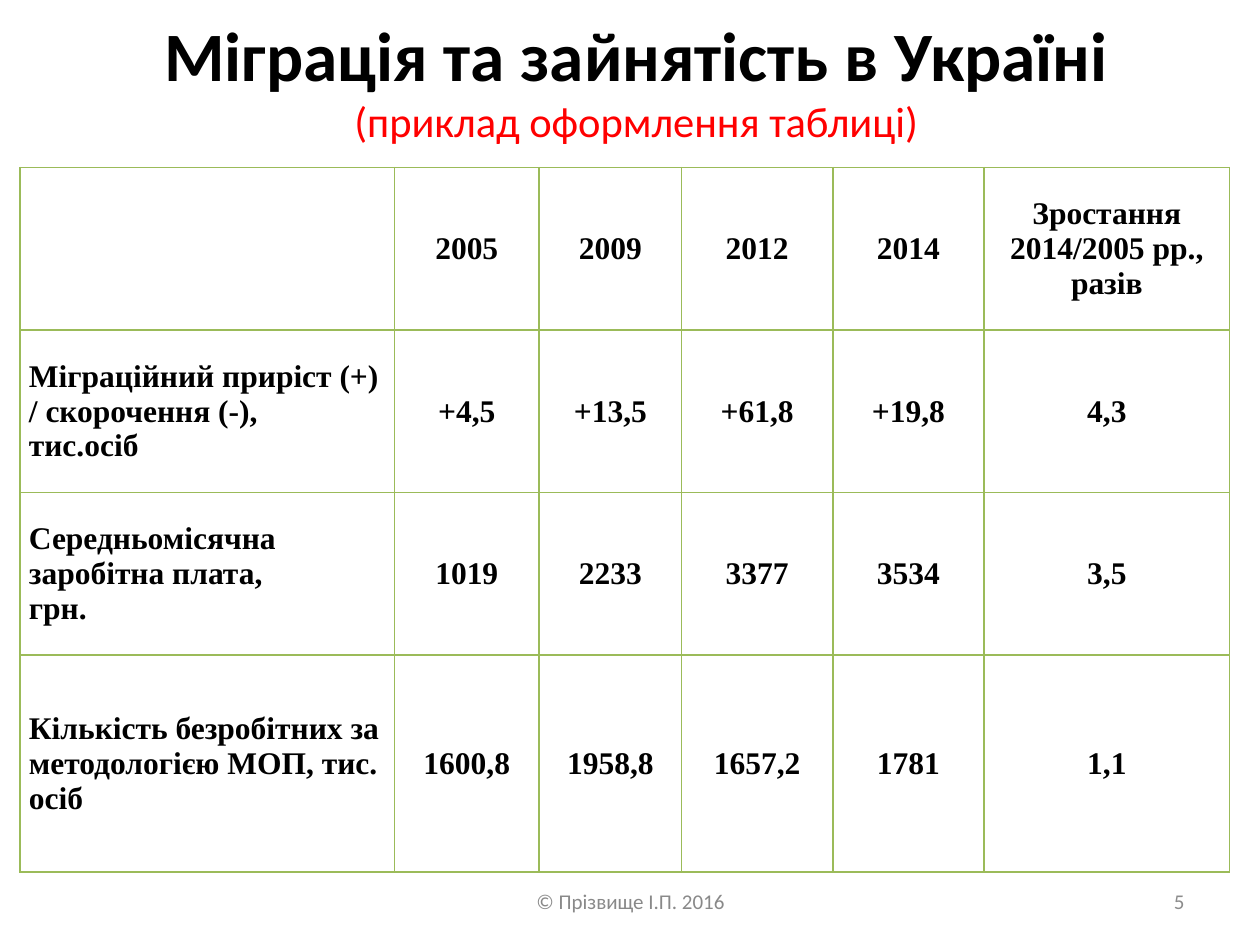
from lxml.etree import SubElement
from pptx import Presentation
from pptx.dml.color import RGBColor
from pptx.enum.text import MSO_ANCHOR as Anchor, PP_ALIGN as Align
from pptx.oxml.ns import qn
from pptx.util import Inches, Pt

BLACK, RED, GREEN = "000000", "FF0000", "9BBB59"
TITLE = dict(name="Calibri", size=Pt(39.6), bold=True)
SUBTITLE = dict(name="Calibri", size=Pt(24.3), bold=False)
FOOTER = dict(name="Calibri", size=Pt(12))
CELL = dict(name="Times New Roman", size=Pt(18), bold=True)
CELL_BOX = dict(margin_left=Inches(0.07), margin_right=Inches(0.07),
                margin_top=0, margin_bottom=0, vertical_anchor=Anchor.MIDDLE)

COLUMNS = [2.97, 1.15, 1.13, 1.2, 1.2, 1.95]
ROWS = [1.29, 1.29, 1.29, 1.72]
DATA = [
    ["", "2005", "2009", "2012", "2014", "Зростання\n2014/2005 рр.,\nразів"],
    ["Міграційний приріст (+) / скорочення (-),\nтис.осіб",
     "+4,5", "+13,5", "+61,8", "+19,8", "4,3"],
    ["Середньомісячна заробітна плата,\nгрн.",
     "1019", "2233", "3377", "3534", "3,5"],
    ["Кількість безробітних за методологією МОП, тис. осіб",
     "1600,8", "1958,8", "1657,2", "1781", "1,1"],
]


def color(hex_value):
    return RGBColor.from_string(hex_value)


def apply(target, values):
    for name, value in values.items():
        setattr(target, name, value)


def add_span(para, text, font, hex_value):
    span = para.add_run()
    span.text = text
    apply(span.font, font)
    span.font.color.rgb = color(hex_value)


def add_text_box(page, box, align):
    """Add a wrapped, middle-anchored text box and return its first paragraph."""
    frame = page.shapes.add_textbox(*map(Inches, box)).text_frame
    apply(frame, dict(word_wrap=True, vertical_anchor=Anchor.MIDDLE))
    para = frame.paragraphs[0]
    para.alignment = align
    return para


def add_title(page, box):
    para = add_text_box(page, box, Align.CENTER)
    add_span(para, "Міграція та зайнятість в Україні", TITLE, BLACK)
    para.add_line_break()
    add_span(para, "(приклад оформлення таблиці)", SUBTITLE, RED)


def add_footer(page, box, text, align, hex_value):
    add_span(add_text_box(page, box, align), text, FOOTER, hex_value)


def add_borders(cell, hex_value, width):
    properties = cell._tc.get_or_add_tcPr()
    for side in ("lnL", "lnR", "lnT", "lnB"):
        line = SubElement(properties, qn(f"a:{side}"), w=str(width))
        fill = SubElement(line, qn("a:solidFill"))
        SubElement(fill, qn("a:srgbClr"), val=hex_value)


def fill_cell(cell, text, align):
    apply(cell, CELL_BOX)
    add_borders(cell, GREEN, Pt(1))
    cell.fill.background()
    frame = cell.text_frame
    for index, line in enumerate(text.splitlines()):
        para = frame.add_paragraph() if index else frame.paragraphs[0]
        para.alignment = align
        add_span(para, line, CELL, BLACK)


def add_data_table(page, box):
    table = page.shapes.add_table(len(ROWS), len(COLUMNS), *map(Inches, box)).table
    apply(table, dict(first_row=False, horz_banding=False))
    for column, width in zip(table.columns, COLUMNS):
        column.width = Inches(width)
    for row, height, texts in zip(table.rows, ROWS, DATA):
        row.height = Inches(height)
        for index, (cell, text) in enumerate(zip(row.cells, texts)):
            fill_cell(cell, text, Align.CENTER if index else Align.LEFT)


def main():
    deck = Presentation()
    apply(deck, dict(slide_width=Inches(10), slide_height=Inches(7.5)))
    page = deck.slides.add_slide(deck.slide_layouts[6])
    add_title(page, (0.55, 0, 9, 1.25))
    add_footer(page, (7.17, 6.95, 2.33, 0.4), "5", Align.RIGHT, "8C8C8C")
    add_data_table(page, (0.16, 1.33, sum(COLUMNS), sum(ROWS)))
    add_footer(page, (3.42, 6.95, 3.17, 0.4), "© Прізвище І.П. 2016",
               Align.CENTER, "898989")
    deck.save("out.pptx")


if __name__ == "__main__":
    main()
